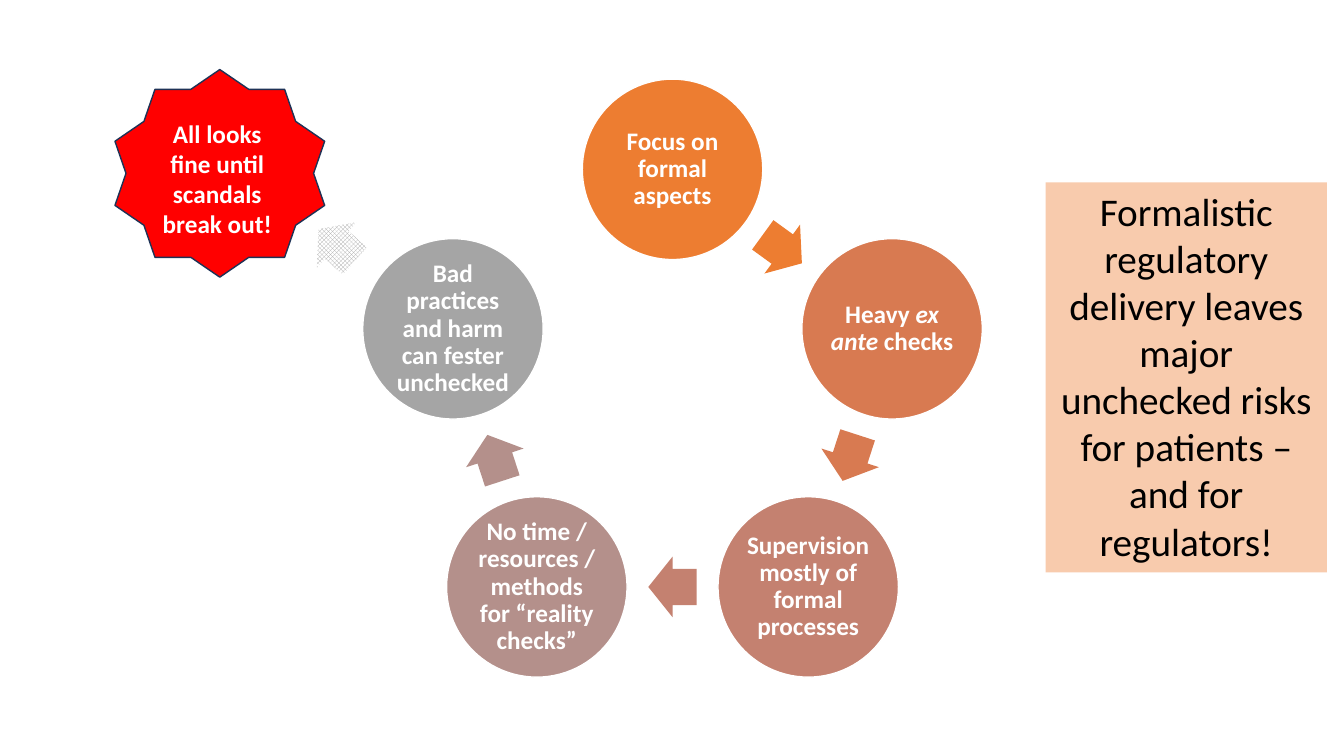
"""Build a slide showing the vicious cycle of formalistic regulation."""
from dataclasses import dataclass
from math import cos, pi, radians, sin

from pptx import Presentation
from pptx.dml.color import RGBColor
from pptx.enum.dml import MSO_PATTERN
from pptx.enum.shapes import MSO_SHAPE
from pptx.enum.text import MSO_ANCHOR, MSO_AUTO_SIZE, PP_ALIGN
from pptx.util import Pt

OVAL = MSO_SHAPE.OVAL
ARROW = MSO_SHAPE.RIGHT_ARROW
STAR = MSO_SHAPE.STAR_10_POINT
RECT = MSO_SHAPE.RECTANGLE
TRELLIS = MSO_PATTERN.TRELLIS
TOP, MIDDLE = MSO_ANCHOR.TOP, MSO_ANCHOR.MIDDLE
GROW = MSO_AUTO_SIZE.SHAPE_TO_FIT_TEXT
CENTER = PP_ALIGN.CENTER

SCALE = 9144
FONT = "Calibri"
HEX = {
    "white": "FFFFFF", "black": "000000", "orange": "ED7D31",
    "rust": "D87A51", "clay": "C48170", "mauve": "B4908B",
    "gray": "A5A5A5", "red": "FF0000", "navy": "1E3256", "peach": "F8CBAD",
}
RING_X, RING_Y, RING_R = 667, 397, 229
DISC = 179
ARROW_W, ARROW_H = 48, 60
INSET = 1


@dataclass
class Step:
    text: str
    color: str


STEPS = [
    Step("Focus on formal aspects", "orange"),
    Step("Heavy *ex ante *checks", "rust"),
    Step("Supervision mostly of formal processes", "clay"),
    Step("No time / resources / methods for “reality checks”", "mauve"),
    Step("Bad practices and harm can fester unchecked", "gray"),
]


def px(value: float):
    return round(value * SCALE)


def rgb(name: str):
    return RGBColor.from_string(HEX[name])


def ring(angle: float, radius: float):
    turn = radians(angle)
    return RING_X + radius * sin(turn), RING_Y - radius * cos(turn)


def add_form(slide, kind, x: float, y: float, w: int, h: int, fill: str, line: str = ""):
    form = slide.shapes.add_shape(kind, px(x), px(y), px(w), px(h))
    form.shadow.inherit = False
    form.fill.solid()
    form.fill.fore_color.rgb = rgb(fill)
    if line:
        form.line.color.rgb = rgb(line)
        form.line.width = Pt(1)
    else:
        form.line.fill.background()
    return form


def add_arrow(slide, x: float, y: float, turn: float, fill: str):
    arrow = add_form(slide, ARROW, x - ARROW_W / 2, y - ARROW_H / 2, ARROW_W, ARROW_H, fill)
    arrow.adjustments[0], arrow.adjustments[1] = 0.6, 0.5
    arrow.rotation = turn
    return arrow


def set_text(form, text: str, size: int, color: str, bold: bool, anchor=TOP):
    frame = form.text_frame
    frame.word_wrap = True
    frame.vertical_anchor = anchor
    para = frame.paragraphs[0]
    para.alignment = CENTER
    for i, part in enumerate(text.split("*")):
        run = para.add_run()
        run.text = part
        font = run.font
        font.name, font.size, font.bold = FONT, Pt(size), bold
        font.italic = i % 2 == 1
        font.color.rgb = rgb(color)
    return frame


def add_disc(slide, step: Step, angle: float):
    x, y = ring(angle, RING_R)
    disc = add_form(slide, OVAL, x - DISC / 2, y - DISC / 2, DISC, DISC, step.color, "white")
    frame = set_text(disc, step.text, 18, "white", True, MIDDLE)
    frame.margin_left = frame.margin_right = px(INSET)
    frame.margin_top = frame.margin_bottom = px(INSET)
    frame.paragraphs[0].line_spacing = 0.9


def add_cycle(slide):
    gap = 360 / len(STEPS)
    for i, step in enumerate(STEPS):
        add_disc(slide, step, i * gap)
        if i < len(STEPS) - 1:
            turn = (i + 0.5) * gap
            x, y = ring(turn, RING_R * cos(pi / len(STEPS)))
            add_arrow(slide, x, y, turn, step.color)


def add_burst(slide):
    fill = add_arrow(slide, 334, 243, 221.1, "gray").fill
    fill.patterned()
    fill.pattern = TRELLIS
    fill.fore_color.rgb = rgb("gray")
    fill.back_color.rgb = rgb("white")
    add_form(slide, STAR, 114, 69, 208, 206, "red", "navy")
    label = slide.shapes.add_textbox(px(145), px(112), px(141), px(131))
    frame = set_text(label, "All looks fine until scandals break out!", 18, "white", True)
    frame.auto_size = GROW


def add_moral(slide):
    panel = add_form(slide, RECT, 1037, 181, 279, 387, "peach")
    text = ("Formalistic regulatory delivery leaves major unchecked risks "
            "for patients – and for regulators!")
    set_text(panel, text, 28, "black", False).auto_size = GROW


def main():
    deck = Presentation()
    deck.slide_width, deck.slide_height = px(1333), px(750)
    slide = deck.slides.add_slide(deck.slide_layouts[6])
    add_cycle(slide)
    add_burst(slide)
    add_moral(slide)
    deck.save("out.pptx")


if __name__ == "__main__":
    main()
